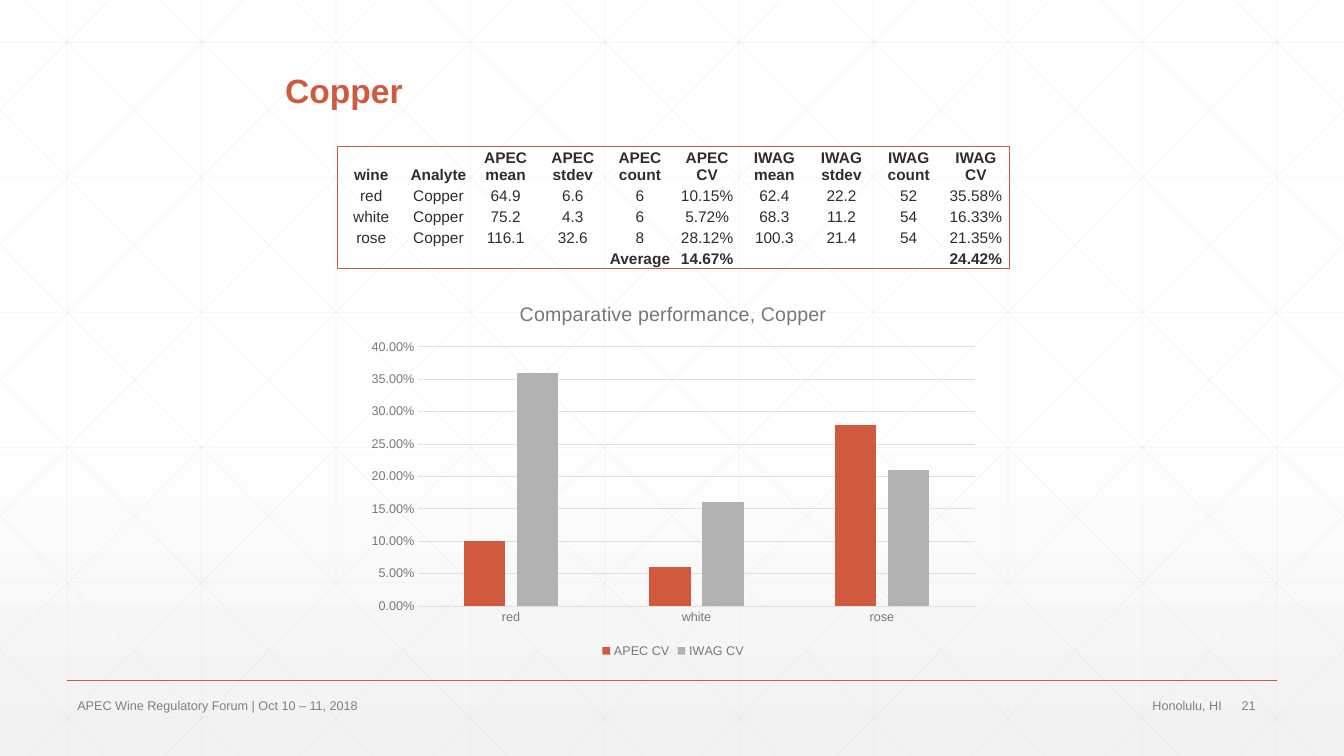
from lxml import etree
from pptx import Presentation
from pptx import util as u
from pptx.chart.data import CategoryChartData
from pptx.dml.color import RGBColor
from pptx.enum import chart as ch, shapes, text
from pptx.oxml.ns import qn

W, H = 33.87, 19.05
COLORS = {"accent": "D15A3E", "text": "2D2E2D", "footer": "808080", "axis": "767876",
          "grid": "DFE0DF", "series": "B2B2B2", "mesh": "D9D9D9",
          "top": "FFFFFF", "bottom": "F2F2F2"}
NO_STYLE = "{2D5ABB26-0587-4C30-8999-92F81FD0307C}"


def rgb(name):
    return RGBColor.from_string(COLORS[name])


class Deck:
    """Holds the style and the current slide."""
    font = "Arial"

    def __init__(self):
        self.prs = Presentation()
        self.prs.slide_width, self.prs.slide_height = u.Cm(W), u.Cm(H)
        self.s = self.prs.slides.add_slide(self.prs.slide_layouts[5])

    def style(self, f, size, color, bold=False):
        f.name, f.size, f.bold = self.font, u.Pt(size), bold
        f.color.rgb = rgb(color)

    def background(self):
        fill = self.s.background.fill
        fill.gradient()
        fill.gradient_angle = 270
        for stop, pos, name in zip(fill.gradient_stops, (0.53, 1), ("top", "bottom")):
            stop.position, stop.color.rgb = pos, rgb(name)

    def line(self, x1, y1, x2, y2, color, width, alpha=100):
        c = self.s.shapes.add_connector(shapes.MSO_CONNECTOR.STRAIGHT,
                                        *map(u.Cm, (x1, y1, x2, y2)))
        c.line.color.rgb, c.line.width = rgb(color), u.Pt(width)
        if alpha < 100:
            clr = c.line._ln.find(".//" + qn("a:srgbClr"))
            etree.SubElement(clr, qn("a:alpha"), val=str(alpha * 1000))
        etree.SubElement(c._element.spPr, qn("a:effectLst"))

    def title(self, x, y, w, h, words):
        sp = self.s.shapes.title
        self.s.shapes._spTree.append(sp._element)  # in front of the mesh
        sp.left, sp.top, sp.width, sp.height = map(u.Cm, (x, y, w, h))
        tf = sp.text_frame
        tf.text, tf.vertical_anchor = words, text.MSO_ANCHOR.BOTTOM
        p = tf.paragraphs[0]
        p.alignment, p.line_spacing = text.PP_ALIGN.LEFT, 0.9
        self.style(p.font, 24, "accent", True)

    def footer(self, x, w, words, align=text.PP_ALIGN.LEFT):
        tf = self.s.shapes.add_textbox(*map(u.Cm, (x, 17.48, w, 0.61))).text_frame
        tf.word_wrap, tf.vertical_anchor = True, text.MSO_ANCHOR.MIDDLE
        p = tf.paragraphs[0]
        p.text, p.alignment = words, align
        self.style(p.font, 9, "footer")

    def border(self, cell, side):
        ln = etree.SubElement(cell._tc.get_or_add_tcPr(), qn("a:ln" + side), w="6350")
        fill = etree.SubElement(ln, qn("a:solidFill"))
        etree.SubElement(fill, qn("a:srgbClr"), val=COLORS["accent"])

    def table(self, x, y, col_w, row_h, rows):
        n, m = len(rows), len(rows[0])
        tbl = self.s.shapes.add_table(n, m, u.Cm(x), u.Cm(y), u.Cm(col_w * m),
                                      u.Cm(sum(row_h))).table
        tbl.first_row = tbl.horz_banding = False
        tbl._tbl.tblPr.find(qn("a:tableStyleId")).text = NO_STYLE
        for col in tbl.columns:
            col.width = u.Cm(col_w)
        for i, row in enumerate(rows):
            tbl.rows[i].height = u.Cm(row_h[i])
            for j, words in enumerate(row):
                cell = tbl.cell(i, j)
                cell.margin_left = cell.margin_right = cell.margin_top = u.Cm(0.02)
                cell.margin_bottom = 0
                cell.vertical_anchor = text.MSO_ANCHOR.BOTTOM
                # Outer frame only
                edges = {"L": j == 0, "R": j == m - 1, "T": i == 0, "B": i == n - 1}
                for side, outer in edges.items():
                    if outer:
                        self.border(cell, side)
                cell.fill.background()
                p = cell.text_frame.paragraphs[0]
                p.text, p.alignment = words, text.PP_ALIGN.CENTER
                self.style(p.font, 11, "text", i in (0, n - 1))

    def columns(self, x, y, w, h, heading, cats, series):
        data = CategoryChartData(number_format="0.00%")
        data.categories = cats
        for name, vals, _ in series:
            data.add_series(name, vals)
        chart = self.s.shapes.add_chart(ch.XL_CHART_TYPE.COLUMN_CLUSTERED,
                                        *map(u.Cm, (x, y, w, h)), data).chart
        self.style(chart.font, 10, "text")
        # Title and legend
        chart.has_title = True
        p = chart.chart_title.text_frame.paragraphs[0]
        p.text = heading
        self.style(p.font, 14, "axis")
        chart.chart_title.include_in_layout = False
        chart.has_legend = True
        chart.legend.position = ch.XL_LEGEND_POSITION.BOTTOM
        chart.legend.include_in_layout = False
        self.style(chart.legend.font, 9, "axis")
        # Columns
        plot = chart.plots[0]
        plot.gap_width, plot.overlap, plot.vary_by_categories = 219, -27, False
        for ser, (_, _, color) in zip(plot.series, series):
            ser.format.fill.solid()
            ser.format.fill.fore_color.rgb = rgb(color)
        # Axes
        cat, val = chart.category_axis, chart.value_axis
        for axis in (cat, val):
            axis.major_tick_mark = axis.minor_tick_mark = ch.XL_TICK_MARK.NONE
            self.style(axis.tick_labels.font, 9, "axis")
        val.minimum_scale, val.maximum_scale, val.major_unit = 0, 0.4, 0.05
        val.tick_labels.number_format = "0.00%"
        val.tick_labels.number_format_is_linked = False
        val.format.line.fill.background()
        for line in (cat.format.line, val.major_gridlines.format.line):
            line.color.rgb, line.width = rgb("grid"), u.Pt(0.75)


def mesh(deck):
    step, run = W / 10, 18.93
    lines = [(step * (i + 0.5), 0, step * (i + 0.5), H) for i in range(10)]
    lines += [(0, 1.07 + 3.4 * i, W, 1.07 + 3.4 * i) for i in range(6)]
    # Diagonals, cut at the slide edges, each with its mirror image
    for i in range(-5, 10):
        start = 0.64 + step * i
        x1, x2 = max(start, 0), min(start + run, W)
        y1, y2 = ((x - start) * H / run for x in (x1, x2))
        lines += [(x1, y1, x2, y2), (W - x1, y1, W - x2, y2)]
    for ends in lines:
        deck.line(*ends, "mesh", 0.5, 25)


def main():
    deck = Deck()
    # Backdrop
    deck.background()
    mesh(deck)
    deck.line(1.7, 17.15, 32.17, 17.15, "accent", 1)

    # Title and footer
    deck.title(6.93, 1.4, 20.02, 1.52, "Copper")
    deck.footer(31.04, 1.14, "21")
    deck.footer(1.7, 17.02, "APEC Wine Regulatory Forum | Oct 10 – 11, 2018")
    deck.footer(18.9, 12.14, "Honolulu, HI", text.PP_ALIGN.RIGHT)

    # Results table, half as wide as the slide
    measures = ("mean", "stdev", "count", "CV")
    header = ["wine", "Analyte"] + [f"{g} {m}" for g in ("APEC", "IWAG") for m in measures]
    deck.table(8.51, 3.68, W / 2 / len(header), [0.84] + [0.53] * 4, [
        header,
        ["red", "Copper", "64.9", "6.6", "6", "10.15%", "62.4", "22.2", "52", "35.58%"],
        ["white", "Copper", "75.2", "4.3", "6", "5.72%", "68.3", "11.2", "54", "16.33%"],
        ["rose", "Copper", "116.1", "32.6", "8", "28.12%", "100.3", "21.4", "54", "21.35%"],
        ["", "", "", "", "Average", "14.67%", "", "", "", "24.42%"],
    ])

    # Comparison chart
    deck.columns(9.05, 7.19, 15.83, 9.5, "Comparative performance, Copper",
                 ["red", "white", "rose"],
                 [("APEC CV", (0.1, 0.06, 0.28), "accent"),
                  ("IWAG CV", (0.36, 0.16, 0.21), "series")])
    deck.prs.save("out.pptx")


if __name__ == "__main__":
    main()
